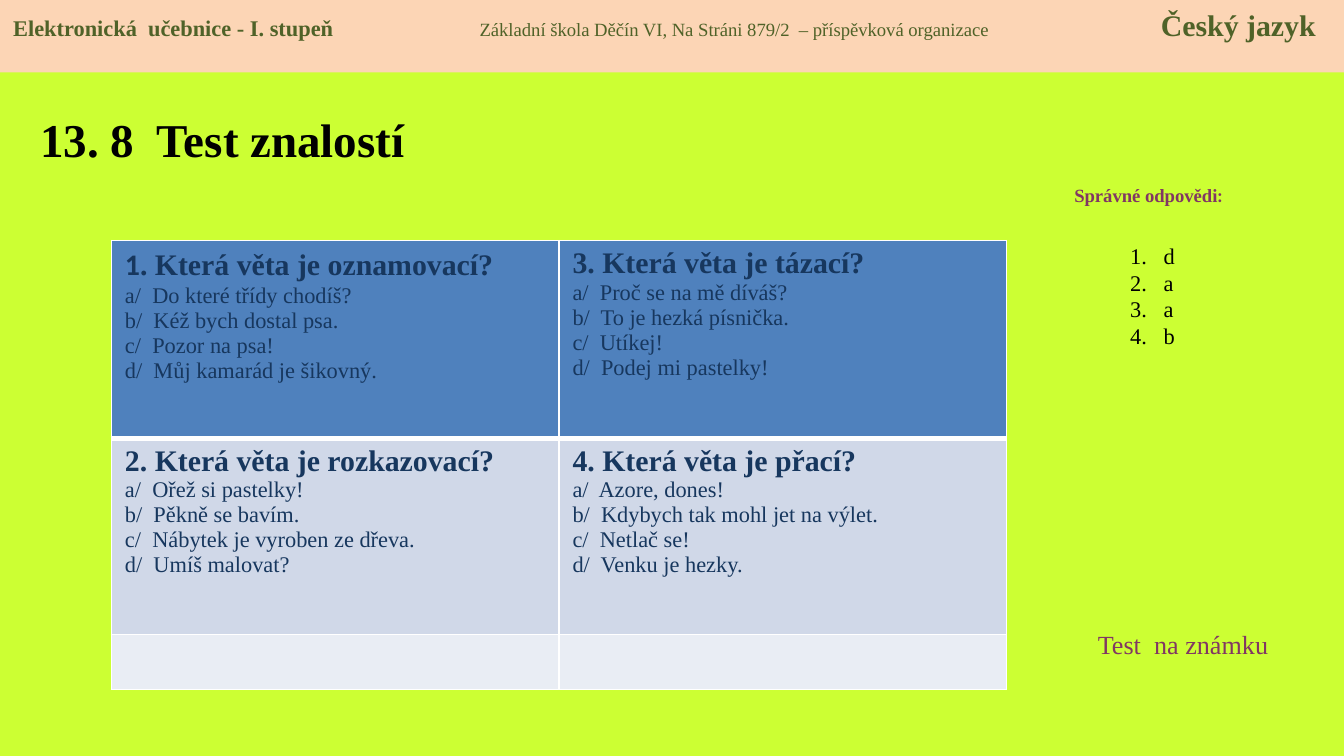
from lxml.etree import SubElement
from pptx import Presentation
from pptx.dml.color import RGBColor
from pptx.enum.shapes import MSO_SHAPE
from pptx.enum.text import MSO_ANCHOR, PP_ALIGN
from pptx.oxml.ns import qn
from pptx.util import Inches, Pt

SERIF = "Times New Roman"
PLUM = "813763"
NAVY = "17375E"
OLIVE = "4F6228"
QUESTIONS = [
    [
        ("1", ". Která věta je oznamovací?", "Calibri",
         ["Do které třídy chodíš?", "Kéž bych dostal psa.", "Pozor na psa!", "Můj kamarád je šikovný."]),
        ("3", ". Která věta je tázací?", SERIF,
         ["Proč se na mě díváš?", "To je hezká písnička.", "Utíkej!", "Podej mi pastelky!"]),
    ],
    [
        ("2", ". Která věta je rozkazovací?", SERIF,
         ["Ořež si pastelky!", "Pěkně se bavím.", "Nábytek je vyroben ze dřeva.", "Umíš malovat?"]),
        ("4", ". Která věta je přací?", SERIF,
         ["Azore, dones!", "Kdybych tak mohl jet na výlet.", "Netlač se!", "Venku je hezky."]),
    ],
]
ROW_FILLS = ["4F81BD", "D0D8E8", "E9EDF4"]
ROW_HEIGHTS = [1.47, 1.46, 0.41]


def color(value):
    """Return the colour for a hex string."""
    return RGBColor.from_string(value)


def set_fill(target, value):
    """Give a shape, cell or background a solid fill."""
    target.fill.solid()
    target.fill.fore_color.rgb = color(value)


def add_run(paragraph, text, size, value, bold=False, font=SERIF):
    """Append a formatted run to a paragraph."""
    run = paragraph.add_run()
    run.text = text
    run.font.size = Pt(size)
    run.font.bold = bold
    run.font.name = font
    run.font.color.rgb = color(value)


def set_hanging(paragraph, indent):
    """Give a paragraph a hanging indent and return its properties."""
    properties = paragraph._p.get_or_add_pPr()
    properties.set("marL", str(Inches(indent)))
    properties.set("indent", str(-Inches(indent)))
    return properties


def add_text_box(slide, left, top, width, height):
    """Add a wrapping text box and return its text frame."""
    text_frame = slide.shapes.add_textbox(
        Inches(left), Inches(top), Inches(width), Inches(height)).text_frame
    text_frame.word_wrap = True
    return text_frame


def add_banner(slide):
    """Add the header band with three texts set on tab stops."""
    shape = slide.shapes.add_shape(MSO_SHAPE.RECTANGLE, 0, 0, Inches(10), Inches(0.54))
    shape.shadow.inherit = False
    shape.line.fill.background()
    set_fill(shape, "FCD5B5")
    shape.text_frame.vertical_anchor = MSO_ANCHOR.TOP
    paragraph = shape.text_frame.paragraphs[0]
    paragraph.alignment = PP_ALIGN.LEFT
    tabs = SubElement(paragraph._p.get_or_add_pPr(), qn("a:tabLst"))
    for position in (3.47, 8.54):
        SubElement(tabs, qn("a:tab"), pos=str(Inches(position)), algn="l")
    add_run(paragraph, "Elektronická  učebnice - I. stupeň\t", 12, OLIVE, True)
    add_run(paragraph, "Základní škola Děčín VI, Na Stráni 879/2  – příspěvková organizace\t", 10, OLIVE)
    add_run(paragraph, "Český jazyk", 16, OLIVE, True)


def add_answers(slide, answers):
    """Add the numbered list of correct answers."""
    text_frame = add_text_box(slide, 8.31, 1.75, 0.55, 1.11)
    for index, answer in enumerate(answers):
        paragraph = text_frame.add_paragraph() if index else text_frame.paragraphs[0]
        properties = set_hanging(paragraph, 0.25)
        SubElement(properties, qn("a:buFont"), typeface="+mj-lt")
        SubElement(properties, qn("a:buAutoNum"), type="arabicPeriod")
        add_run(paragraph, answer, 12, "000000")


def set_borders(cell, top, bottom):
    """Draw white borders around a cell."""
    properties = cell._tc.get_or_add_tcPr()
    for side, width in (("L", 1), ("R", 1), ("T", top), ("B", bottom)):
        line = SubElement(properties, qn(f"a:ln{side}"), w=str(Pt(width)))
        SubElement(SubElement(line, qn("a:solidFill")), qn("a:srgbClr"), val="FFFFFF")


def fill_question(cell, number, question, number_font, options):
    """Write a question and its lettered options into a cell."""
    paragraph = cell.text_frame.paragraphs[0]
    set_hanging(paragraph, 0.38)
    add_run(paragraph, number, 16, NAVY, True, number_font)
    add_run(paragraph, question, 16, NAVY, True)
    for letter, option in zip("abcd", options):
        paragraph = cell.text_frame.add_paragraph()
        set_hanging(paragraph, 0.38)
        add_run(paragraph, f"{letter}/  {option}", 12, NAVY)


def add_question_table(slide):
    """Add the table of test questions."""
    table = slide.shapes.add_table(
        3, 2, Inches(0.83), Inches(1.79), Inches(6.66), Inches(sum(ROW_HEIGHTS))).table
    table.first_row = False
    table.horz_banding = False
    for row_index, (height, fill) in enumerate(zip(ROW_HEIGHTS, ROW_FILLS)):
        table.rows[row_index].height = Inches(height)
        for cell in table.rows[row_index].cells:
            set_borders(cell, 3 if row_index == 1 else 1, 3 if row_index == 0 else 1)
            set_fill(cell, fill)
    for row_index, questions in enumerate(QUESTIONS):
        for column_index, question in enumerate(questions):
            fill_question(table.cell(row_index, column_index), *question)


def main():
    """Build and save the slide."""
    presentation = Presentation()
    presentation.slide_width = Inches(10)
    presentation.slide_height = Inches(10) * 9 // 16
    slide = presentation.slides.add_slide(presentation.slide_layouts[6])
    set_fill(slide.background, "CCFF33")

    title = add_text_box(slide, 0.2, 0.61, 3.19, 0.84)
    title.vertical_anchor = MSO_ANCHOR.MIDDLE
    add_run(title.paragraphs[0], "13. 8  Test znalostí", 25.2, "000000", True)

    heading = add_text_box(slide, 7.76, 1.32, 1.57, 0.27).paragraphs[0]
    heading.alignment = PP_ALIGN.CENTER
    add_run(heading, "Správné odpovědi", 10, PLUM, True)
    add_run(heading, ":", 10, PLUM, True, "Calibri")

    add_question_table(slide)
    add_answers(slide, "daab")
    grade = add_text_box(slide, 8.07, 4.63, 1.74, 0.34).paragraphs[0]
    add_run(grade, "Test  na známku", 14, PLUM)
    add_banner(slide)
    presentation.save("out.pptx")


if __name__ == "__main__":
    main()
